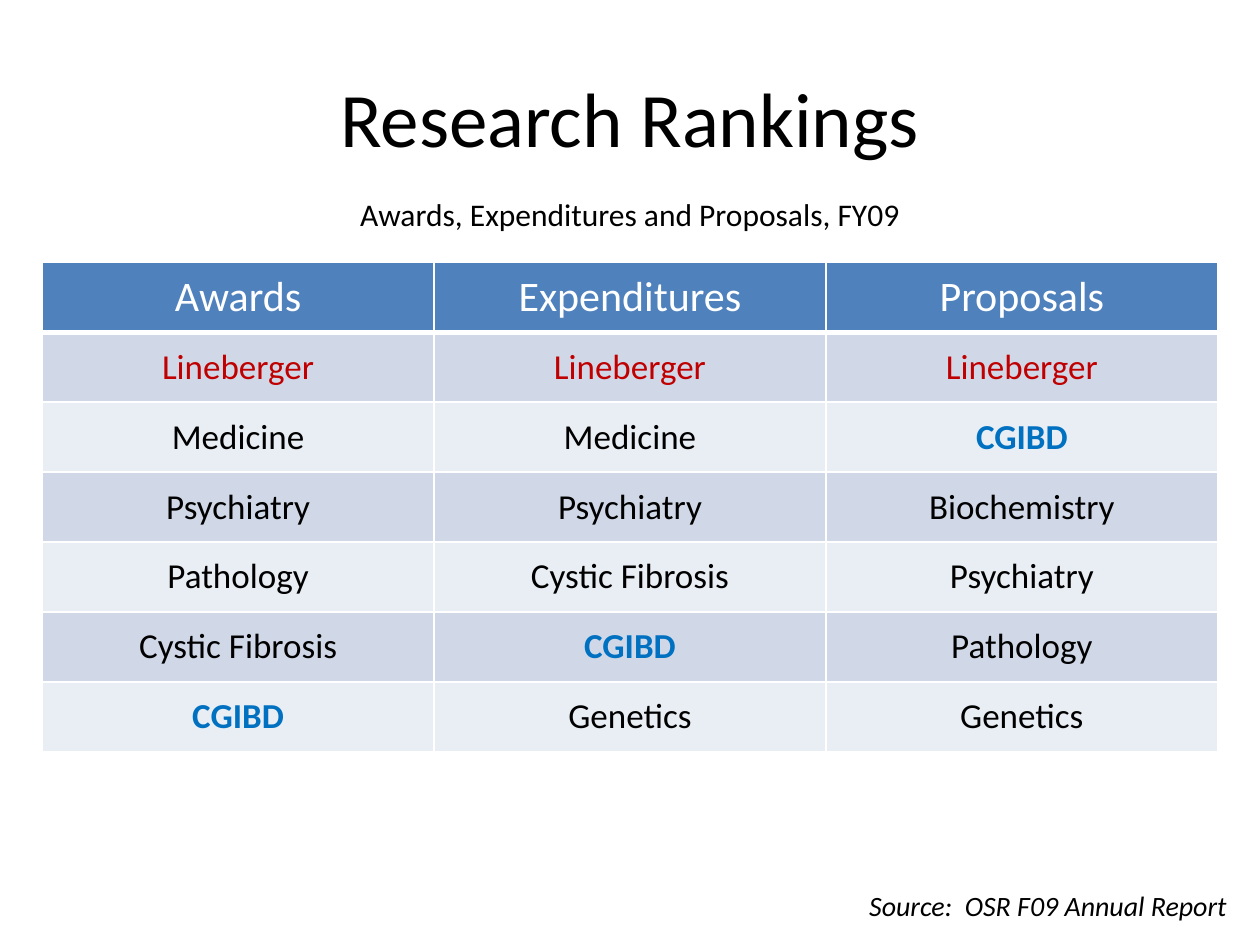
from dataclasses import dataclass

from lxml import etree
from pptx import Presentation
from pptx.dml.color import RGBColor
from pptx.enum.text import MSO_ANCHOR, PP_ALIGN
from pptx.oxml.ns import qn
from pptx.util import Cm, Pt

CENTER, RIGHT = PP_ALIGN.CENTER, PP_ALIGN.RIGHT
TOP, MIDDLE = MSO_ANCHOR.TOP, MSO_ANCHOR.MIDDLE

FONT = "Calibri"
BLACK, WHITE, RED, BLUE = "000000", "FFFFFF", "C00000", "0070C0"
HEADER_FILL, BANDS = "4F81BD", ("D0D8E8", "E9EDF4")
HIGHLIGHTS = {
    "Lineberger": {"color": RED},
    "CGIBD": {"color": BLUE, "bold": True},
}


@dataclass
class Label:
    text: str
    left: float
    top: float
    width: float
    height: float
    fmt: dict
    align: PP_ALIGN = CENTER
    anchor: MSO_ANCHOR = TOP


LABELS = [
    Label("Research Rankings", 1.27, 0.76, 22.86, 3.18, {"size": Pt(44)}, anchor=MIDDLE),
    Label("Awards, Expenditures and Proposals, FY09", 2.22, 3.81, 20.96, 1.3,
          {"size": Pt(18)}),
    Label("Source:  OSR F09 Annual Report", 13.55, 17.78, 11.43, 0.94,
          {"size": Pt(16), "italic": True}, RIGHT),
]

RANKINGS = [
    ("Awards", "Expenditures", "Proposals"),
    ("Lineberger", "Lineberger", "Lineberger"),
    ("Medicine", "Medicine", "CGIBD"),
    ("Psychiatry", "Psychiatry", "Biochemistry"),
    ("Pathology", "Cystic Fibrosis", "Psychiatry"),
    ("Cystic Fibrosis", "CGIBD", "Pathology"),
    ("CGIBD", "Genetics", "Genetics"),
]


def rgb(value: str) -> RGBColor:
    return RGBColor.from_string(value)


def write(tf, text: str, align: PP_ALIGN, fmt: dict) -> None:
    p = tf.paragraphs[0]
    p.alignment = align
    r = p.add_run()
    r.text = text
    values = {"name": FONT, "color": BLACK, "bold": False} | fmt
    r.font.color.rgb = rgb(values.pop("color"))
    for name, value in values.items():
        setattr(r.font, name, value)


def add_label(slide, label: Label) -> None:
    box = (Cm(v) for v in (label.left, label.top, label.width, label.height))
    tf = slide.shapes.add_textbox(*box).text_frame
    tf.word_wrap = True
    tf.vertical_anchor = label.anchor
    write(tf, label.text, label.align, label.fmt)


def add_borders(cell, widths: dict) -> None:
    tc_pr = cell._tc.get_or_add_tcPr()
    for side, width in widths.items():
        ln = etree.SubElement(tc_pr, qn(f"a:ln{side}"), w=str(Pt(width)))
        fill = etree.SubElement(ln, qn("a:solidFill"))
        etree.SubElement(fill, qn("a:srgbClr"), val=WHITE)


def add_rankings(slide) -> None:
    rows, cols = len(RANKINGS), len(RANKINGS[0])
    table = slide.shapes.add_table(
        rows, cols, Cm(0.85), Cm(5.29), Cm(7.9 * cols), Cm(1.41 * rows)).table
    for i, names in enumerate(RANKINGS):
        header = i == 0
        for j, name in enumerate(names):
            cell = table.cell(i, j)
            cell.vertical_anchor = MIDDLE
            add_borders(cell, {"L": 1, "R": 1, "T": 1, "B": 3 if header else 1})
            cell.fill.solid()
            cell.fill.fore_color.rgb = rgb(HEADER_FILL if header else BANDS[(i - 1) % 2])
            if header:
                fmt = {"size": Pt(24), "color": WHITE}
            else:
                fmt = {"size": Pt(20)} | HIGHLIGHTS.get(name, {})
            write(cell.text_frame, name, CENTER, fmt)


def main() -> None:
    prs = Presentation()
    prs.slide_width, prs.slide_height = Cm(25.4), Cm(19.05)
    slide = prs.slides.add_slide(prs.slide_layouts[6])

    # Rankings table
    add_rankings(slide)

    # Title, subtitle and source
    for label in LABELS:
        add_label(slide, label)

    prs.save("out.pptx")


if __name__ == "__main__":
    main()
